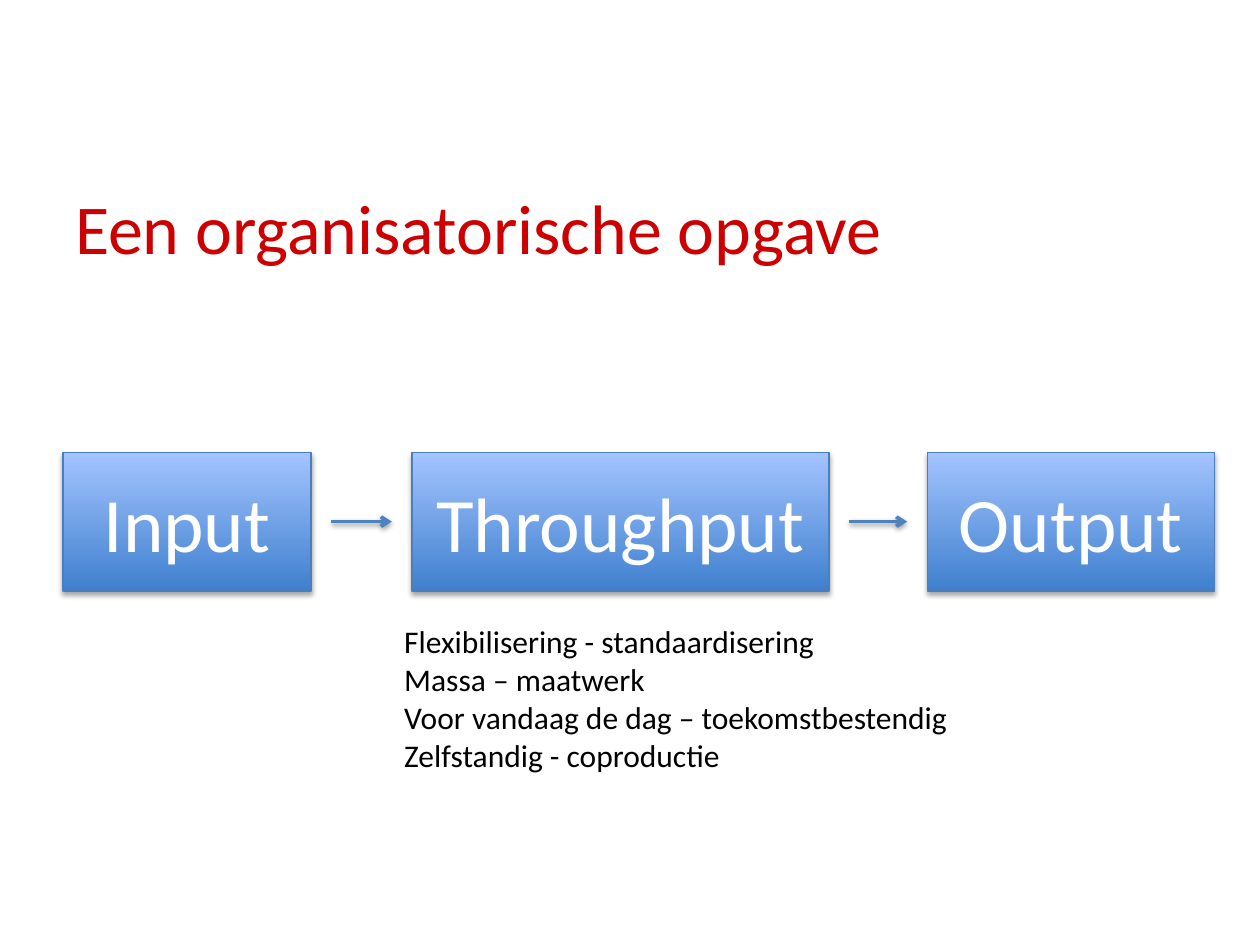
from lxml import etree
from pptx import Presentation
from pptx.dml.color import RGBColor
from pptx.enum import shapes, text
from pptx.oxml import ns
from pptx.util import Inches, Pt

RED = RGBColor(0xCC, 0x00, 0x00)
BLACK = RGBColor(0x00, 0x00, 0x00)
WHITE = RGBColor(0xFF, 0xFF, 0xFF)
DEEP = RGBColor(0x3F, 0x80, 0xCE)
PALE = RGBColor(0xA4, 0xC4, 0xFF)
EDGE = RGBColor(0x4B, 0x7E, 0xBC)
BLUE = RGBColor(0x4F, 0x81, 0xBD)


def write(words, shape, size, color, align=text.PP_ALIGN.LEFT, anchor=text.MSO_ANCHOR.MIDDLE):
    frame = shape.text_frame
    frame.word_wrap = True
    frame.vertical_anchor = anchor
    frame.text = words
    for para in frame.paragraphs:
        para.alignment = align
        para.font.name = "Calibri"
        para.font.size = Pt(size)
        para.font.color.rgb = color


def shade(props, dist, alpha):
    effects = props.find(ns.qn("a:effectLst"))
    if effects is None:
        effects = etree.SubElement(props, ns.qn("a:effectLst"))
    outer = etree.SubElement(effects, ns.qn("a:outerShdw"), blurRad=str(Pt(3.1)),
                             dist=str(Pt(dist)), dir="5400000", rotWithShape="0")
    black = etree.SubElement(outer, ns.qn("a:srgbClr"), val=str(BLACK))
    etree.SubElement(black, ns.qn("a:alpha"), val=str(alpha * 1000))


deck = Presentation()
deck.slide_width, deck.slide_height = Inches(10), Inches(7.5)
slide = deck.slides.add_slide(deck.slide_layouts[6])

title = slide.shapes.add_textbox(Inches(0.5), Inches(1.17), Inches(9), Inches(1.25))
write("Een organisatorische opgave", title, size=40, color=RED)

top, high, inset = 3.59, 1.1, 0.16
steps = [("Input", 0.5, 1.97), ("Throughput", 3.27, 3.31), ("Output", 7.36, 2.28)]

for name, left, wide in steps:
    box = slide.shapes.add_shape(shapes.MSO_SHAPE.RECTANGLE, Inches(left), Inches(top),
                                 Inches(wide), Inches(high))
    box.fill.gradient()
    box.fill.gradient_angle = 90
    for stop, color, place in zip(box.fill.gradient_stops, (DEEP, PALE), (0, 1)):
        stop.color.rgb = color
        stop.position = place
    box.line.color.rgb = EDGE
    box.line.width = Pt(0.75)
    box.shadow.inherit = False
    shade(box._element.spPr, dist=1.8, alpha=35)
    write(name, box, size=44, color=WHITE, align=text.PP_ALIGN.CENTER)

mid = Inches(top + high / 2)
for (_, left, wide), (_, end, _) in zip(steps, steps[1:]):
    arrow = slide.shapes.add_connector(shapes.MSO_CONNECTOR.STRAIGHT,
                                       Inches(left + wide + inset), mid, Inches(end - inset), mid)
    arrow.line.color.rgb = BLUE
    arrow.line.width = Pt(2)
    etree.SubElement(arrow.line._get_or_add_ln(), ns.qn("a:tailEnd"), type="arrow")
    shade(arrow._element.spPr, dist=1.6, alpha=38)

goals = ["Flexibilisering - standaardisering", "Massa – maatwerk",
         "Voor vandaag de dag – toekomstbestendig", "Zelfstandig - coproductie"]
notes = slide.shapes.add_textbox(Inches(3.11), Inches(4.89), Inches(5.12), Inches(1.31))
write("\n".join(goals), notes, size=18, color=BLACK, anchor=text.MSO_ANCHOR.TOP)
notes.text_frame.auto_size = text.MSO_AUTO_SIZE.SHAPE_TO_FIT_TEXT

deck.save("out.pptx")
